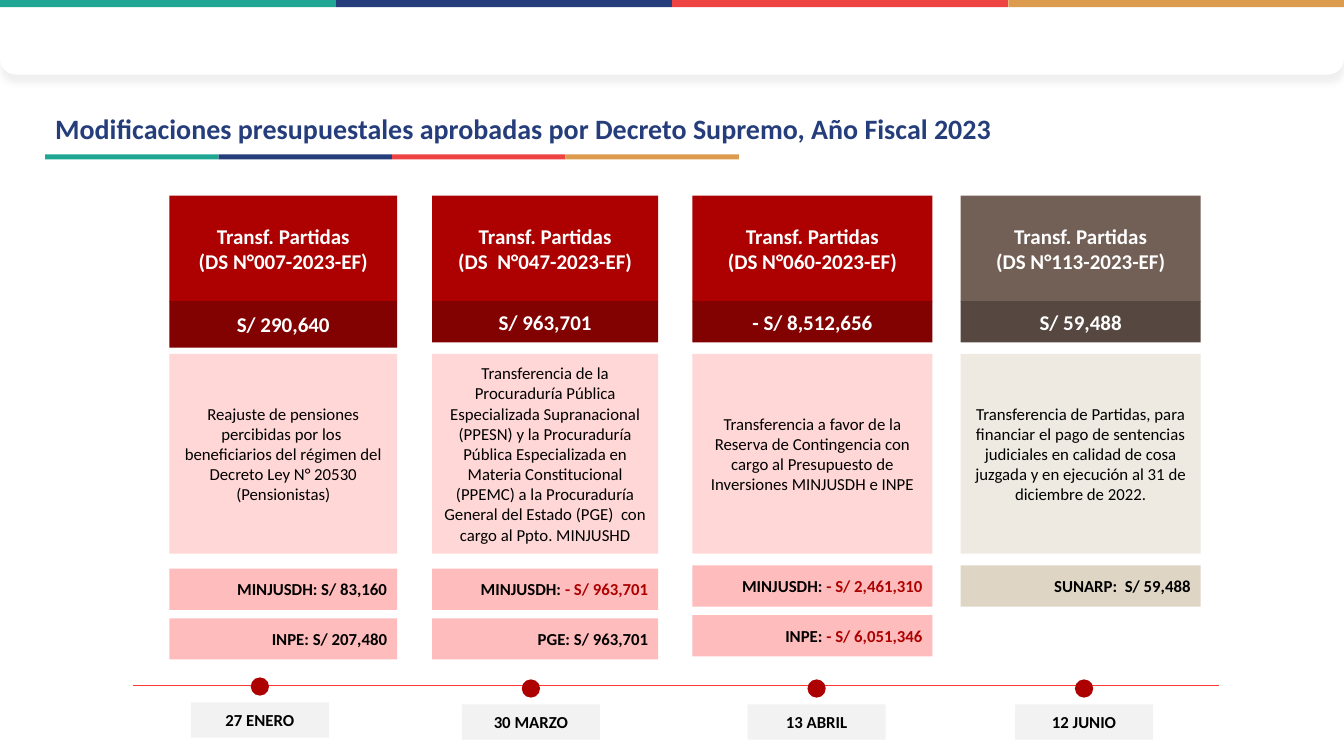
from lxml import etree
from pptx import Presentation
from pptx.dml.color import RGBColor
from pptx.enum.shapes import MSO_CONNECTOR, MSO_SHAPE
from pptx.enum.text import MSO_ANCHOR, PP_ALIGN
from pptx.oxml import parse_xml
from pptx.oxml.ns import nsdecls, qn
from pptx.util import Cm, Pt

RECT, OVAL = MSO_SHAPE.RECTANGLE, MSO_SHAPE.OVAL
ROUND_BOTTOM = MSO_SHAPE.ROUND_2_SAME_RECTANGLE
STRAIGHT = MSO_CONNECTOR.STRAIGHT
MIDDLE = MSO_ANCHOR.MIDDLE
CENTER, RIGHT = PP_ALIGN.CENTER, PP_ALIGN.RIGHT

FONT = "Calibri"
WHITE = RGBColor(0xFF, 0xFF, 0xFF)
BLACK = RGBColor(0x00, 0x00, 0x00)
TEAL = RGBColor(0x1F, 0xA7, 0x94)
NAVY = RGBColor(0x25, 0x3E, 0x7B)
CORAL = RGBColor(0xED, 0x43, 0x43)
OCHRE = RGBColor(0xDD, 0x9C, 0x4D)
RED = RGBColor(0xAD, 0x01, 0x01)
DARK_RED = RGBColor(0x82, 0x01, 0x01)
PALE_PINK = RGBColor(0xFF, 0xD7, 0xD7)
PINK = RGBColor(0xFF, 0xBC, 0xBC)
BROWN = RGBColor(0x72, 0x60, 0x56)
DARK_BROWN = RGBColor(0x56, 0x48, 0x41)
PALE_SAND = RGBColor(0xEE, 0xEA, 0xE2)
SAND = RGBColor(0xDE, 0xD5, 0xC5)
LIGHT_GRAY = RGBColor(0xF2, 0xF2, 0xF2)
LINE_RED = RGBColor(0xFD, 0x36, 0x36)

REDS = (RED, DARK_RED, PALE_PINK, PINK)
BROWNS = (BROWN, DARK_BROWN, PALE_SAND, SAND)

# left, width, timeline centre, y shift of date, amount height, top of entities,
# palette, decree, amount, description, entities (label, positive, negative), date
TRANSFERS = [
    (4.27, 5.74, 6.55, -0.05, 1.17, 14.33, REDS,
     "(DS N°007-2023-EF)", "S/ 290,640",
     "Reajuste de pensiones percibidas por los  beneficiarios del régimen del "
     "Decreto Ley N° 20530 (Pensionistas)",
     [("MINJUSDH: S/ 83,160", ""), ("INPE: S/ 207,480", "")], "27 ENERO"),
    (10.89, 5.7, 13.38, 0, 1.04, 14.33, REDS,
     "(DS  N°047-2023-EF)", "S/ 963,701",
     "Transferencia de la Procuraduría Pública Especializada Supranacional "
     "(PPESN) y la Procuraduría Pública Especializada en Materia Constitucional "
     "(PPEMC) a la Procuraduría General del Estado (PGE)  con cargo al Ppto. "
     "MINJUSHD",
     [("MINJUSDH: ", "- S/ 963,701"), ("PGE: S/ 963,701", "")], "30 MARZO"),
    (17.45, 6.05, 20.58, 0, 1.04, 14.25, REDS,
     "(DS N°060-2023-EF)", "- S/ 8,512,656",
     "Transferencia a favor de la Reserva de Contingencia con cargo al "
     "Presupuesto de Inversiones MINJUSDH e INPE",
     [("MINJUSDH: ", "- S/ 2,461,310"), ("INPE: ", "- S/ 6,051,346")],
     "13 ABRIL"),
    (24.21, 6.05, 27.32, 0, 1.04, 14.25, BROWNS,
     "(DS N°113-2023-EF)", "S/ 59,488",
     "Transferencia de Partidas, para financiar el pago de sentencias "
     "judiciales en calidad de cosa juzgada y en ejecución al 31 de diciembre "
     "de 2022.",
     [("SUNARP:  S/ 59,488", "")], "12 JUNIO"),
]


def add_block(kind, x, y, w, h, color):
    """Add a flat filled shape without outline; lengths in centimetres."""
    sp = s.shapes.add_shape(kind, Cm(x), Cm(y), Cm(w), Cm(h))
    sp.shadow.inherit = False
    sp.fill.solid()
    sp.fill.fore_color.rgb = color
    sp.line.fill.background()
    return sp


def write(sp, lines, size, color, bold=True, align=CENTER):
    tf = sp.text_frame
    tf.word_wrap = True
    tf.vertical_anchor = MIDDLE
    for i, line in enumerate(lines):
        p = tf.add_paragraph() if i else tf.paragraphs[0]
        p.add_run().text = line
        p.alignment = align
        p.font.name = FONT
        p.font.size = Pt(size)
        p.font.bold = bold
        p.font.color.rgb = color
    return tf


prs = Presentation()
prs.slide_width, prs.slide_height = Cm(33.87), Cm(19.05)
s = prs.slides.add_slide(prs.slide_layouts[6])

# Top band and the two four-colour strips
band = add_block(ROUND_BOTTOM, 0, 0, 33.87, 1.88, WHITE)
band.adjustments[0], band.adjustments[1] = 0, 0.214
band.element.spPr.find(qn("a:effectLst")).append(parse_xml(
    f'<a:outerShdw {nsdecls("a")} blurRad="50800" dist="63500" dir="5400000" '
    'algn="t" rotWithShape="0"><a:srgbClr val="A5A5AA"><a:alpha val="17000"/>'
    '</a:srgbClr></a:outerShdw>'))
for x, y, w, h in [(0, 0, 8.47, 0.18), (1.14, 3.89, 4.37, 0.13)]:
    for i, color in enumerate((TEAL, NAVY, CORAL, OCHRE)):
        add_block(RECT, x + i * w, y, w, h, color)

title = s.shapes.add_textbox(Cm(1.14), Cm(2.72), Cm(31.78), Cm(1.14))
tf = write(title, ["Modificaciones presupuestales aprobadas por Decreto Supremo, "
                   "Año Fiscal 2023"], 20, NAVY, align=None)
tf.paragraphs[0].line_spacing = 0.9

timeline = s.shapes.add_connector(STRAIGHT, Cm(3.35), Cm(17.27), Cm(30.73), Cm(17.27))
timeline.line.color.rgb = LINE_RED
timeline.line.width = Pt(0.5)
etree.SubElement(timeline.element.spPr, qn("a:effectLst"))

# One column per transfer
for (x, w, center, shift, amount_h, entity_y, palette,
     decree, amount, description, entities, date) in TRANSFERS:
    head, total, body, entity_fill = palette
    write(add_block(RECT, x, 8.92, w, 5.03, body), [description], 12, BLACK, bold=False)
    write(add_block(RECT, x, 4.93, w, 2.67, head), ["Transf. Partidas", decree], 15, WHITE)
    write(add_block(RECT, x, 7.59, w, amount_h, total), [amount], 15, WHITE)
    for i, (label, negative) in enumerate(entities):
        sp = add_block(RECT, x, entity_y + i * 1.25, w, 1.04, entity_fill)
        tf = write(sp, [label], 12, BLACK, align=RIGHT)
        if negative:
            r = tf.paragraphs[0].add_run()
            r.text = negative
            r.font.color.rgb = RED
    add_block(OVAL, center - 0.23, 17.12 + shift, 0.46, 0.46, RED)
    write(add_block(RECT, center - 1.74, 17.75 + shift, 3.48, 0.89, LIGHT_GRAY),
          [date], 12, BLACK)

prs.save("out.pptx")
